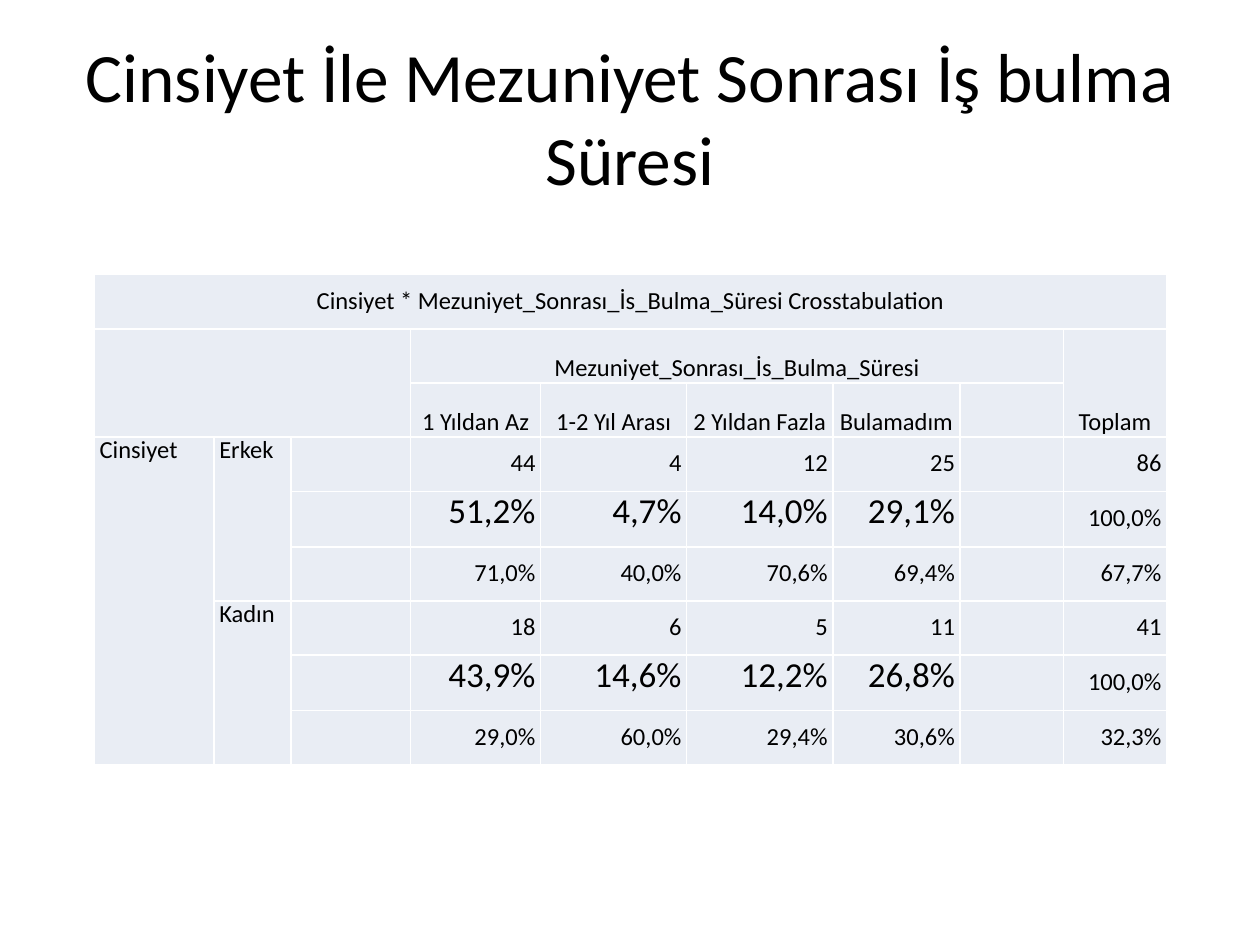
from dataclasses import dataclass

from lxml import etree
from pptx import Presentation
from pptx.dml.color import RGBColor
from pptx.enum.text import MSO_ANCHOR, MSO_AUTO_SIZE, PP_ALIGN
from pptx.oxml.ns import qn
from pptx.util import Inches, Pt

LEFT, CENTER, RIGHT = PP_ALIGN.LEFT, PP_ALIGN.CENTER, PP_ALIGN.RIGHT
TOP, MIDDLE, BOTTOM = MSO_ANCHOR.TOP, MSO_ANCHOR.MIDDLE, MSO_ANCHOR.BOTTOM
TITLE_ONLY = 5


@dataclass(frozen=True)
class Theme:
    font: str = "Calibri"
    text: str = "000000"
    cell: str = "E9EDF4"
    border: str = "FFFFFF"
    title_size: float = 39.6
    body_size: float = 14
    emphasis_size: float = 20
    line_height: float = 16
    border_width: float = 1


COLUMN_WIDTHS = [0.95, 0.61, 0.95, 1.03, 1.16, 1.16, 1.01, 0.82, 0.82]
ROW_HEIGHTS = [0.43, 0.43, 0.43, 0.43, 0.44, 0.43, 0.43, 0.44, 0.43]
FIRST_DATA_ROW, FIRST_DATA_COLUMN, TOTAL_COLUMN = 3, 3, 8
PERCENT_ROWS = (4, 7)

# Row, column, rows spanned, columns spanned
MERGES = [
    (0, 0, 1, 9), (1, 0, 2, 3), (1, 3, 1, 5), (1, 8, 2, 1),
    (3, 0, 6, 1), (3, 1, 3, 1), (6, 1, 3, 1),
]

HEADINGS = {
    (0, 0): "Cinsiyet * Mezuniyet_Sonrası_İs_Bulma_Süresi Crosstabulation",
    (1, 3): "Mezuniyet_Sonrası_İs_Bulma_Süresi",
    (1, 8): "Toplam",
    (2, 3): "1 Yıldan Az",
    (2, 4): "1-2 Yıl Arası",
    (2, 5): "2 Yıldan Fazla",
    (2, 6): "Bulamadım",
}
ROW_LABELS = {(3, 0): "Cinsiyet", (3, 1): "Erkek", (6, 1): "Kadın"}
VALUES = [
    ["44", "4", "12", "25", "", "86"],
    ["51,2%", "4,7%", "14,0%", "29,1%", "", "100,0%"],
    ["71,0%", "40,0%", "70,6%", "69,4%", "", "67,7%"],
    ["18", "6", "5", "11", "", "41"],
    ["43,9%", "14,6%", "12,2%", "26,8%", "", "100,0%"],
    ["29,0%", "60,0%", "29,4%", "30,6%", "", "32,3%"],
]


class SlideBuilder:
    def __init__(self, slide, theme):
        self.slide = slide
        self.theme = theme

    def set_font(self, paragraph, size):
        paragraph.font.name = self.theme.font
        paragraph.font.size = Pt(size)
        paragraph.font.color.rgb = RGBColor.from_string(self.theme.text)

    def title(self, text, left, top, width, height):
        shape = self.slide.shapes.title
        shape.left, shape.top = Inches(left), Inches(top)
        shape.width, shape.height = Inches(width), Inches(height)
        frame = shape.text_frame
        frame.text = text
        frame.word_wrap = True
        frame.auto_size = MSO_AUTO_SIZE.NONE
        frame.vertical_anchor = MIDDLE
        paragraph = frame.paragraphs[0]
        paragraph.alignment = CENTER
        self.set_font(paragraph, self.theme.title_size)

    def table(self, left, top, column_widths, row_heights, merges):
        """Add an empty table with uniform fill and borders, and return it."""
        table = self.slide.shapes.add_table(
            len(row_heights), len(column_widths), Inches(left), Inches(top),
            Inches(sum(column_widths)), Inches(sum(row_heights))).table
        table.first_row = table.horz_banding = False
        for column, width in zip(table.columns, column_widths):
            column.width = Inches(width)
        for row, height in zip(table.rows, row_heights):
            row.height = Inches(height)
        for cell in table.iter_cells():
            cell.fill.solid()
            cell.fill.fore_color.rgb = RGBColor.from_string(self.theme.cell)
            cell.margin_left = cell.margin_right = 0
            cell.margin_top = cell.margin_bottom = 0
            self.set_font(cell.text_frame.paragraphs[0], self.theme.body_size)
            self.borders(cell)
        for row, column, rows, columns in merges:
            last = table.cell(row + rows - 1, column + columns - 1)
            table.cell(row, column).merge(last)
        return table

    def borders(self, cell):
        """Draw all four edges; the line elements must precede the fill."""
        properties = cell._tc.get_or_add_tcPr()
        for index, side in enumerate(("a:lnL", "a:lnR", "a:lnT", "a:lnB")):
            line = etree.Element(qn(side), w=str(Pt(self.theme.border_width)))
            fill = etree.SubElement(line, qn("a:solidFill"))
            etree.SubElement(fill, qn("a:srgbClr"), val=self.theme.border)
            properties.insert(index, line)

    def cell_text(self, cell, text, alignment, anchor, size=None):
        cell.text_frame.text = text
        cell.vertical_anchor = anchor
        paragraph = cell.text_frame.paragraphs[0]
        paragraph.alignment = alignment
        paragraph.line_spacing = Pt(self.theme.line_height)
        self.set_font(paragraph, size or self.theme.body_size)
        properties = paragraph._p.get_or_add_pPr()
        for side in ("marL", "marR"):
            properties.set(side, str(Inches(0.04)))


def main():
    presentation = Presentation()
    presentation.slide_width, presentation.slide_height = Inches(10), Inches(7.5)
    slide = presentation.slides.add_slide(presentation.slide_layouts[TITLE_ONLY])
    theme = Theme()
    builder = SlideBuilder(slide, theme)

    builder.title("Cinsiyet İle Mezuniyet Sonrası İş bulma Süresi", 0.5, 0.3, 9, 1.25)
    table = builder.table(0.75, 2.18, COLUMN_WIDTHS, ROW_HEIGHTS, MERGES)

    for (row, column), text in HEADINGS.items():
        anchor = MIDDLE if row == 0 else BOTTOM
        builder.cell_text(table.cell(row, column), text, CENTER, anchor)
    for (row, column), text in ROW_LABELS.items():
        builder.cell_text(table.cell(row, column), text, LEFT, TOP)
    for row, values in enumerate(VALUES, FIRST_DATA_ROW):
        for column, text in enumerate(values, FIRST_DATA_COLUMN):
            if text:
                emphasized = row in PERCENT_ROWS and column != TOTAL_COLUMN
                size = theme.emphasis_size if emphasized else theme.body_size
                builder.cell_text(table.cell(row, column), text, RIGHT, MIDDLE, size)

    presentation.save("out.pptx")


if __name__ == "__main__":
    main()
